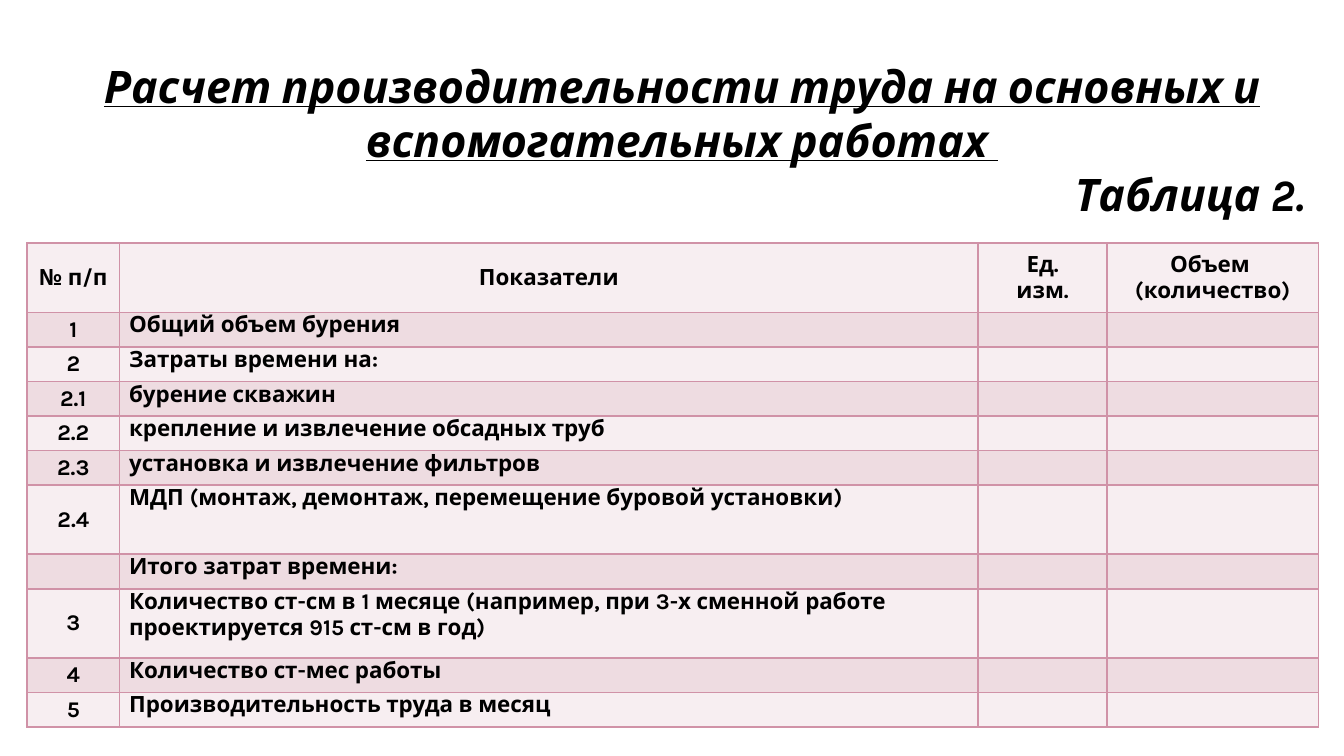
"""Build the slide with the labour productivity table."""
from dataclasses import dataclass

from lxml.etree import SubElement
from pptx import Presentation
from pptx.dml.color import RGBColor as RGB
from pptx.enum.text import MSO_ANCHOR as ANCHOR, MSO_AUTO_SIZE as AUTO, PP_ALIGN as ALIGN
from pptx.oxml import parse_xml
from pptx.oxml.ns import nsdecls, qn
from pptx.util import Inches, Pt


@dataclass(frozen=True)
class Theme:
    font: str = "Karla"
    ink: str = "000000"
    light: str = "F7EEF1"
    dark: str = "EEDCE1"
    border: str = "D092A7"
    title_size: int = 24
    cell_size: int = 12
    border_width: int = 1


def write(p, text, *, theme, size, align=ALIGN.LEFT, italic=False, underline=False):
    p.alignment = align
    if not text:
        SubElement(p._p, qn("a:endParaRPr"), sz=str(size * 100))
        return
    r = p.add_run()
    r.text = text
    r.font.name, r.font.size, r.font.bold = theme.font, Pt(size), True
    r.font.italic, r.font.underline = italic, underline
    r.font.color.rgb = RGB.from_string(theme.ink)


class Deck:
    def __init__(self, theme, width, height):
        self.theme = theme
        self.prs = Presentation()
        self.prs.slide_width, self.prs.slide_height = Inches(width), Inches(height)
        self.s = self.prs.slides.add_slide(self.prs.slide_layouts[5])

    def box(self, x, y, w, h):
        width, height = self.prs.slide_width, self.prs.slide_height
        return round(x * width), round(y * height), round(w * width), round(h * height)

    def title(self, heading, label, area):
        sp = self.s.shapes.title
        sp.left, sp.top, sp.width, sp.height = self.box(*area)
        tf = sp.text_frame
        tf.word_wrap, tf.auto_size, tf.vertical_anchor = True, AUTO.NONE, ANCHOR.TOP
        style = {"theme": self.theme, "size": self.theme.title_size, "italic": True}
        write(tf.paragraphs[0], heading, align=ALIGN.CENTER, underline=True, **style)
        write(tf.add_paragraph(), label, align=ALIGN.RIGHT, **style)

    def cell(self, cell, text, color, centered):
        cell.margin_left = cell.margin_right = Inches(0.07)
        cell.margin_top = cell.margin_bottom = 0
        cell.vertical_anchor = ANCHOR.MIDDLE if centered else ANCHOR.TOP
        cell.fill.solid()
        cell.fill.fore_color.rgb = RGB.from_string(color)
        tcPr = cell._tc.get_or_add_tcPr()
        for i, side in enumerate("LRTB"):
            tcPr.insert(i, parse_xml(
                f'<a:ln{side} {nsdecls("a")} w="{Pt(self.theme.border_width)}"><a:solidFill>'
                f'<a:srgbClr val="{self.theme.border}"/></a:solidFill></a:ln{side}>'))
        tf = cell.text_frame
        for i, line in enumerate(text.split("\n")):
            p = tf.add_paragraph() if i else tf.paragraphs[0]
            write(p, line, theme=self.theme, size=self.theme.cell_size,
                  align=ALIGN.CENTER if centered else ALIGN.LEFT)

    def table(self, header, rows, columns, area):
        x, y, w, h = self.box(*area)
        units = [2] + [height for *_, height in rows]
        table = self.s.shapes.add_table(len(units), len(columns), x, y, w, h).table
        for column, share in zip(table.columns, columns):
            column.width = round(w * share / sum(columns))
        for row, unit in zip(table.rows, units):
            row.height = round(h * unit / sum(units))
        texts = [header] + [(number, name, "", "") for number, name, _ in rows]
        for i, line in enumerate(texts):
            color = self.theme.dark if i % 2 else self.theme.light
            for j, text in enumerate(line):
                self.cell(table.cell(i, j), text, color, centered=i == 0 or j == 0)


HEADER = ("№ п/п", "Показатели", "Ед.\nизм.", "Объем \n(количество)")
ROWS = [
    ("1", "Общий объем бурения", 1),
    ("2", "Затраты времени на:", 1),
    ("2.1", "бурение скважин", 1),
    ("2.2", "крепление и извлечение обсадных труб", 1),
    ("2.3", "установка и извлечение фильтров", 1),
    ("2.4", "МДП (монтаж, демонтаж, перемещение буровой установки)", 2),
    ("", "Итого затрат времени:", 1),
    ("3", "Количество ст-см в 1 месяце (например, при 3-х сменной работе "
          "проектируется 915 ст-см в год)", 2),
    ("4", "Количество ст-мес работы", 1),
    ("5", "Производительность труда в месяц", 1),
]


def main():
    width = 10
    height = width * 9 / 16
    deck = Deck(Theme(), width, height)
    deck.title("Расчет производительности труда на основных и вспомогательных работах ",
               "Таблица 2.", (0.35 / width, 0.39 / height, 9.45 / width, 1.31 / height))
    deck.table(HEADER, ROWS, (0.69, 6.38, 0.96, 1.57),
               (0.2 / width, 1.81 / height, 9.61 / width, 3.6 / height))
    deck.prs.save("out.pptx")


if __name__ == "__main__":
    main()
